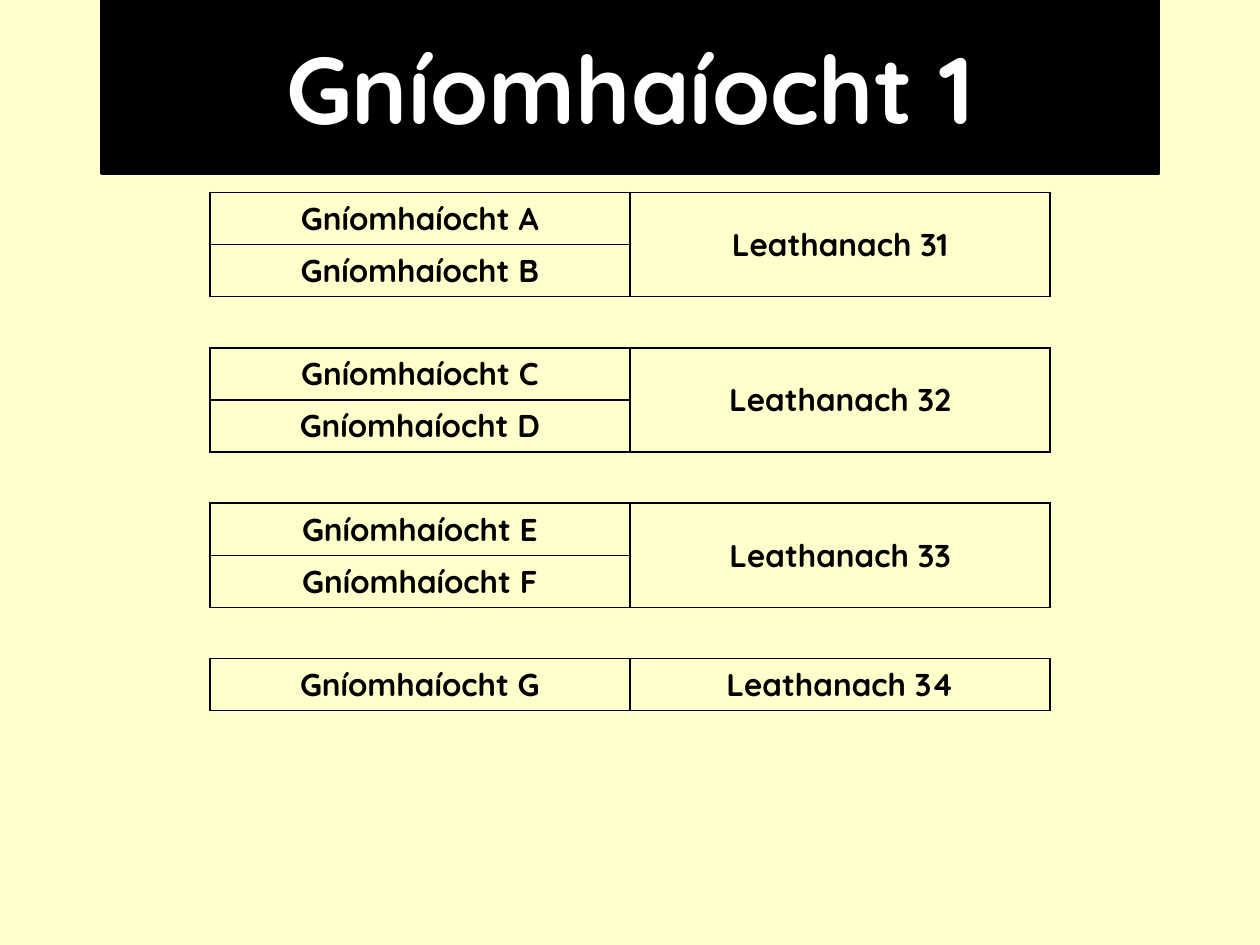
import pptx
import pptx.dml.color
import pptx.enum.text
import pptx.oxml
import pptx.oxml.ns
import pptx.util

Cm = pptx.util.Cm
Pt = pptx.util.Pt
MIDDLE = pptx.enum.text.MSO_ANCHOR.MIDDLE
TOP = pptx.enum.text.MSO_ANCHOR.TOP

BLACK, WHITE, CREAM = "000000", "FFFFFF", "FFFFCC"
GROUPS = [("AB", 31), ("CD", 32), ("EF", 33), ("G", 34)]


def paint(fill, color):
    fill.solid()
    fill.fore_color.rgb = pptx.dml.color.RGBColor.from_string(color)


def write(frame, text, size, color):
    line = frame.paragraphs[0]
    line.alignment = pptx.enum.text.PP_ALIGN.CENTER
    run = line.add_run()
    run.text = text
    run.font.name = "Quicksand"
    run.font.size = Pt(size)
    run.font.bold = True
    paint(run.font.fill, color)


def border(cell, sides):
    cell.fill.background()
    props = cell._tc.get_or_add_tcPr()
    for place, side in enumerate("LRTB"):
        if side in sides:
            fill = f'<a:solidFill><a:srgbClr val="{BLACK}"/></a:solidFill>'
        else:
            fill = "<a:noFill/>"
        edge = pptx.oxml.parse_xml(
            f'<a:ln{side} {pptx.oxml.ns.nsdecls("a")} w="{Pt(1)}">{fill}</a:ln{side}>')
        props.insert(place, edge)


def add_title(slide, left, top, width, height):
    title = slide.shapes.title
    title.left, title.top, title.width, title.height = left, top, width, height
    paint(title.fill, BLACK)
    paint(title.line.fill, BLACK)
    title.line.width = Pt(2)
    title.text_frame.vertical_anchor = MIDDLE
    write(title.text_frame, "Gníomhaíocht 1", 54, WHITE)


def add_pages(slide, left, top, width, height):
    count = sum(len(names) for names, page in GROUPS) + len(GROUPS) - 1
    frame = slide.shapes.add_table(count, 2, left, top, width, height)
    table = frame.table
    table.first_row = table.horz_banding = False
    row = 0
    for names, page in GROUPS:
        if row:
            for col in range(2):
                border(table.cell(row, col), "TB")
            table.cell(row, 0).merge(table.cell(row, 1))
            row += 1
        first = table.cell(row, 1)
        for name in names:
            cell = table.cell(row, 0)
            cell.vertical_anchor = TOP
            write(cell.text_frame, f"Gníomhaíocht {name}", 18, BLACK)
            for col in range(2):
                border(table.cell(row, col), "LRTB")
            row += 1
        if len(names) > 1:
            first.merge(table.cell(row - 1, 1))
        first.vertical_anchor = MIDDLE
        write(first.text_frame, f"Leathanach {page}", 18, BLACK)


def main():
    deck = pptx.Presentation()
    deck.slide_width, deck.slide_height = Cm(25.4), Cm(19.05)
    slide = deck.slides.add_slide(deck.slide_layouts[5])
    paint(slide.background.fill, CREAM)
    add_title(slide, Cm(2.05), Cm(0), Cm(21.3), Cm(3.5))
    add_pages(slide, Cm(4.23), Cm(3.88), Cm(16.94), Cm(10.3))
    deck.save("out.pptx")


if __name__ == "__main__":
    main()
